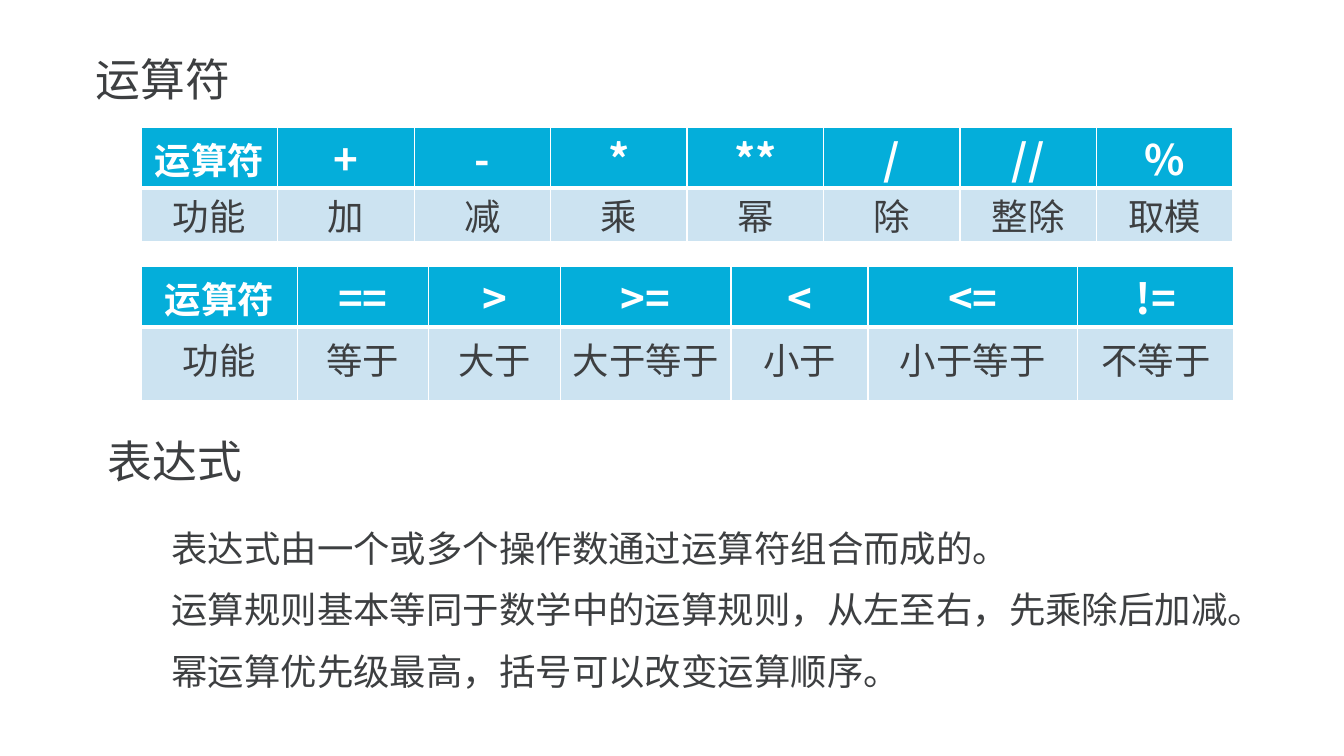
from lxml.etree import SubElement
from pptx import Presentation
from pptx.dml.color import RGBColor
from pptx.enum.text import MSO_ANCHOR, MSO_AUTO_SIZE, PP_ALIGN
from pptx.oxml.ns import qn
from pptx.util import Inches, Pt

INK, WHITE, HEADER_FILL, BODY_FILL = "3D3F41", "FFFFFF", "04AEDA", "CCE3F1"
LATIN, CHINESE = "Arial", "Noto Sans CJK SC"
TABLE_LEFT, TABLE_WIDTH, HEADER_HEIGHT = 1.4, 10.83, 0.6
ARITHMETIC = [("运算符", "功能"), ("+", "加"), ("-", "减"), ("*", "乘"),
              ("**", "幂"), ("/", "除"), ("//", "整除"), ("%", "取模")]
COMPARISON = [("运算符", "功能"), ("==", "等于"), (">", "大于"), (">=", "大于等于"),
              ("<", "小于"), ("<=", "小于等于"), ("!=", "不等于")]
RULES = ["表达式由一个或多个操作数通过运算符组合而成的。",
         "运算规则基本等同于数学中的运算规则，从左至右，先乘除后加减。",
         "幂运算优先级最高，括号可以改变运算顺序。"]


def color(value):
    """Turn a hex string into a colour."""
    return RGBColor.from_string(value)


def place(shape, box):
    """Move a shape to a box of left, top, width and height in inches."""
    shape.left, shape.top, shape.width, shape.height = map(Inches, box)


def add_span(para, text, size, ink, latin=LATIN, bold=False):
    """Add one formatted run to a paragraph."""
    span = para.add_run()
    span.text = text
    span.font.size, span.font.bold, span.font.name = Pt(size), bold, latin
    span.font.color.rgb = color(ink)
    SubElement(span.font._element, qn("a:ea"), typeface=CHINESE)


def fill_heading(shape, box, text):
    """Place a section heading in its box."""
    place(shape, box)
    frame = shape.text_frame
    frame.word_wrap, frame.auto_size = True, MSO_AUTO_SIZE.NONE
    frame.vertical_anchor = MSO_ANCHOR.TOP
    frame.margin_top = frame.margin_bottom = 0
    frame.paragraphs[0].alignment = PP_ALIGN.LEFT
    add_span(frame.paragraphs[0], text, 32, INK)


def fill_rules(shape, box, rules):
    """Place the list of rules without bullets."""
    place(shape, box)
    frame = shape.text_frame
    frame.word_wrap, frame.auto_size = True, MSO_AUTO_SIZE.NONE
    frame.vertical_anchor = MSO_ANCHOR.TOP
    frame.margin_top = Inches(0.1)
    for index, rule in enumerate(rules):
        para = frame.add_paragraph() if index else frame.paragraphs[0]
        properties = para._p.get_or_add_pPr()
        properties.set("marL", "0")
        properties.set("indent", "0")
        SubElement(properties, qn("a:buNone"))
        para.line_spacing = Pt(31)
        para.space_before = Pt(13 if index else 0)
        add_span(para, rule, 26, INK)


def set_borders(cell, widths):
    """Draw white borders with the given point widths by side."""
    properties = cell._tc.get_or_add_tcPr()
    for position, (side, width) in enumerate(widths.items()):
        line = properties.makeelement(qn(f"a:ln{side}"), {"w": str(Pt(width))})
        fill = SubElement(line, qn("a:solidFill"))
        SubElement(fill, qn("a:srgbClr"), val=WHITE)
        properties.insert(position, line)


def fill_cell(cell, text, row, column, height):
    """Format a header or body cell of an operator table."""
    header, operator = row == 0, row == 0 and column > 0
    size = 30 if operator else 26
    cell.fill.solid()
    cell.fill.fore_color.rgb = color(HEADER_FILL if header else BODY_FILL)
    cell.vertical_anchor = MSO_ANCHOR.TOP
    cell.margin_left = cell.margin_right = Inches(0.1)
    cell.margin_top = Inches(max(0, min(0.05, height - 1.45 * size / 72)))
    cell.margin_bottom = 0
    para = cell.text_frame.paragraphs[0]
    para.alignment = PP_ALIGN.CENTER
    add_span(para, text, size, WHITE if header else INK,
             CHINESE if operator else LATIN, header)
    set_borders(cell, {"L": 1, "R": 1, "T": 1 if header else 3, "B": 3 if header else 1})


def add_operator_table(slide, box, entries, widths):
    """Add a two-row table of operators and their functions."""
    table = slide.shapes.add_table(2, len(entries), *map(Inches, box)).table
    table.horz_banding = False
    heights = (HEADER_HEIGHT, box[3] - HEADER_HEIGHT)
    for row, height in enumerate(heights):
        table.rows[row].height = Inches(height)
    for column, (entry, width) in enumerate(zip(entries, widths)):
        table.columns[column].width = Inches(width)
        for row, text in enumerate(entry):
            fill_cell(table.cell(row, column), text, row, column, heights[row])


def build_operator_slide(deck):
    """Build the slide on operators and expressions."""
    slide = deck.slides.add_slide(deck.slide_layouts[1])
    fill_rules(slide.placeholders[1], (1.6, 5.12, 11.03, 1.75), RULES)
    fill_heading(slide.shapes.title, (0.85, 0.51, 1.54, 0.64), "运算符")
    add_operator_table(slide, (TABLE_LEFT, 1.26, TABLE_WIDTH, 1.13), ARITHMETIC,
                       [TABLE_WIDTH / len(ARITHMETIC)] * len(ARITHMETIC))
    heading_box = (0.97, 4.3, 1.54, 0.64)
    heading = slide.shapes.add_textbox(*map(Inches, heading_box))
    fill_heading(heading, heading_box, "表达式")
    add_operator_table(slide, (TABLE_LEFT, 2.64, TABLE_WIDTH, 1.33), COMPARISON,
                       [1.55, 1.3, 1.31, 1.69, 1.36, 2.08, 1.55])


def main():
    """Create and save the deck."""
    deck = Presentation()
    deck.slide_width, deck.slide_height = Inches(13.33), Inches(7.5)
    build_operator_slide(deck)
    deck.save("out.pptx")


if __name__ == "__main__":
    main()
